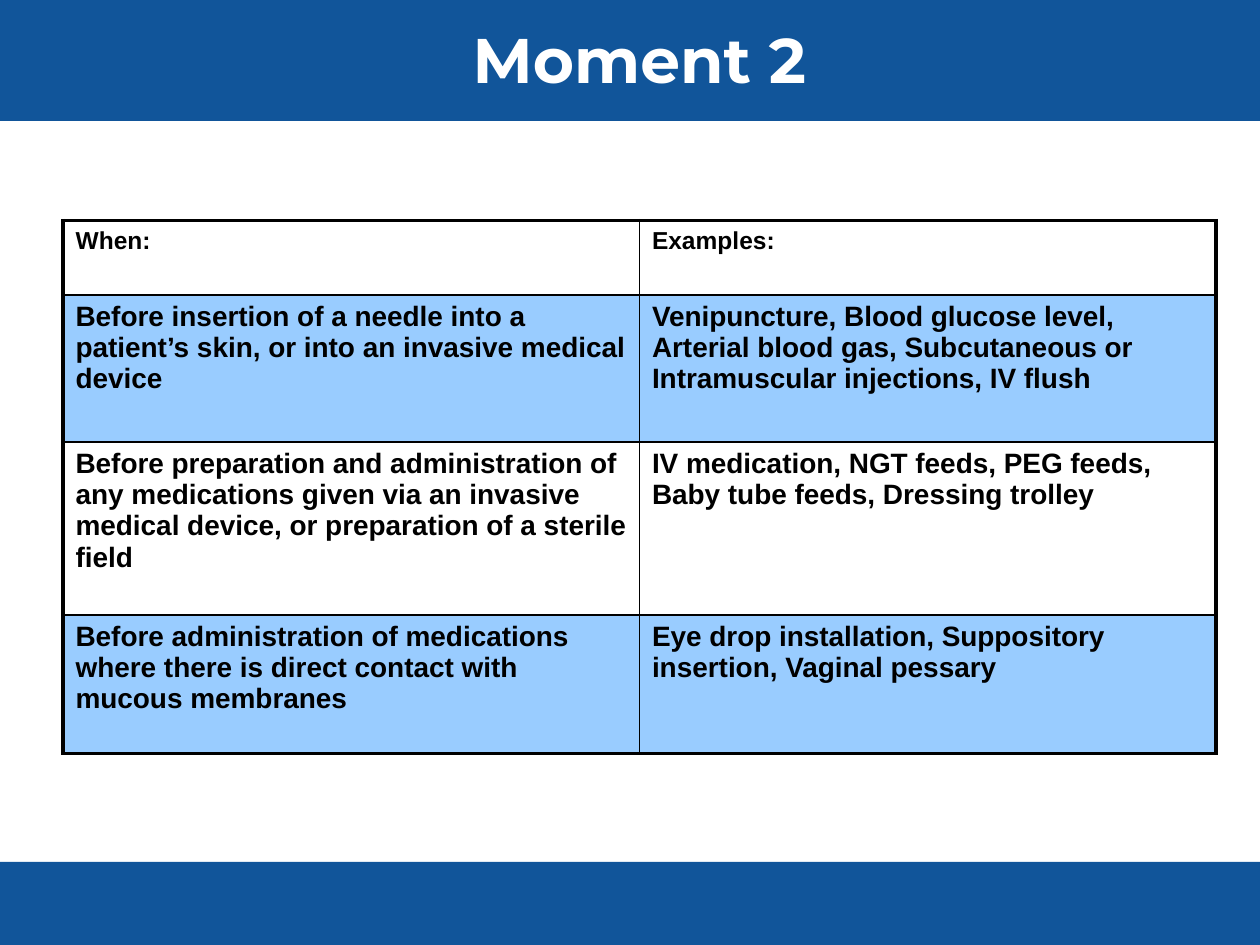
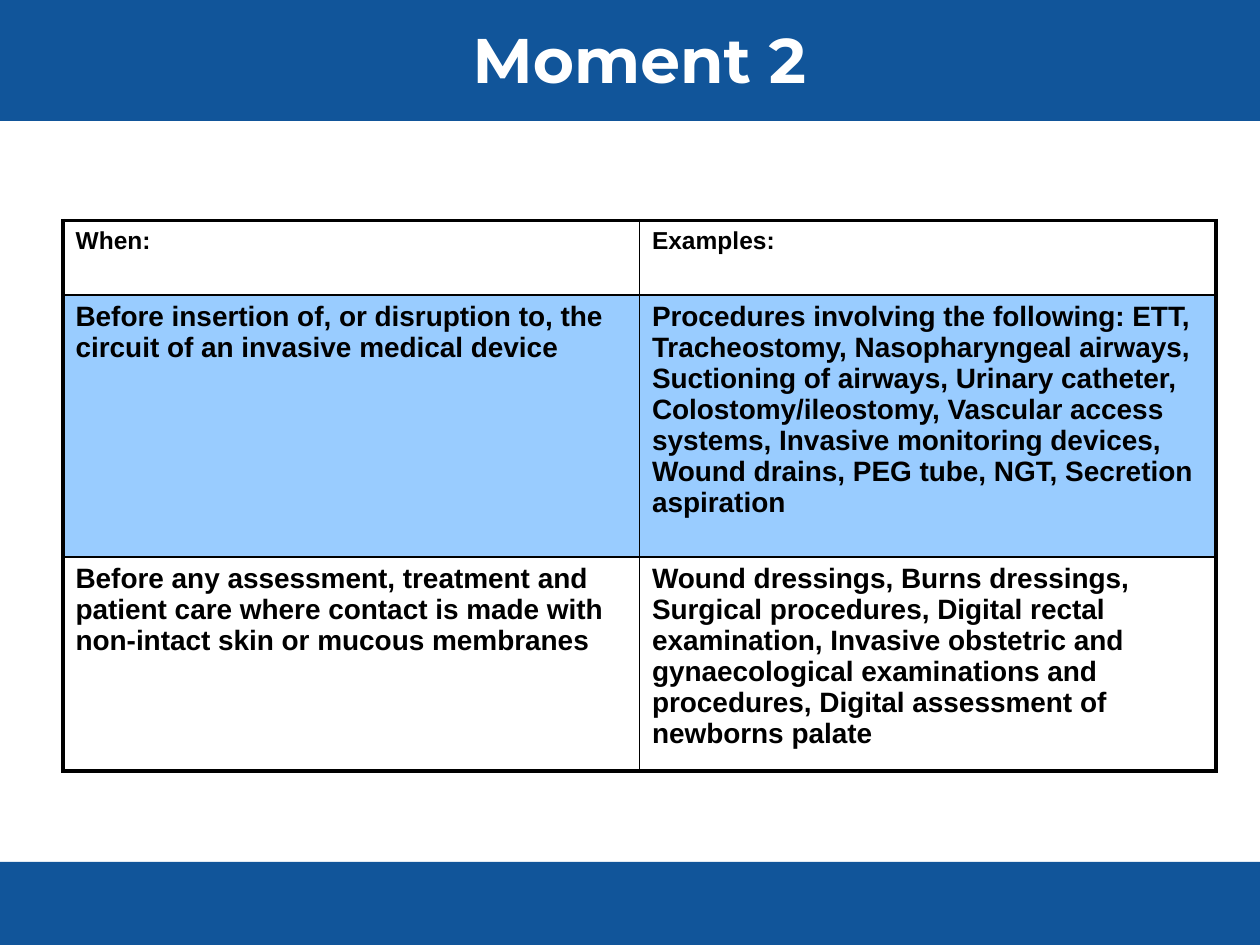
from lxml.etree import SubElement
from pptx import Presentation
from pptx.dml.color import RGBColor
from pptx.enum.shapes import MSO_SHAPE
from pptx.enum.text import MSO_ANCHOR, PP_ALIGN
from pptx.oxml.ns import qn
from pptx.util import Inches, Pt

# Content: one table per slide, each row as (height, when, examples)
TITLE = "Moment 2"
HEAD = (0.59, "When:", "Examples:")
TABLES = [
    [
        HEAD,
        (1.17, "Before insertion of a needle into a patient’s skin, or into an "
               "invasive medical device",
         "Venipuncture, Blood glucose level, Arterial blood gas, Subcutaneous or "
         "Intramuscular injections, IV flush"),
        (1.37, "Before preparation and administration of any medications given via "
               "an invasive medical device, or preparation of a sterile field",
         "IV medication, NGT feeds, PEG feeds, Baby tube feeds, Dressing trolley"),
        (1.1, "Before administration of medications where there is direct contact "
              "with mucous membranes",
         "Eye drop installation, Suppository insertion, Vaginal pessary"),
    ],
    [
        HEAD,
        (2.08, "Before insertion of, or disruption to, the circuit of an invasive "
               "medical device",
         "Procedures involving the following: ETT, Tracheostomy, Nasopharyngeal "
         "airways, Suctioning of airways, Urinary catheter, Colostomy/ileostomy, "
         "Vascular access systems, Invasive monitoring devices, Wound drains, "
         "PEG tube, NGT, Secretion aspiration"),
        (1.58, "Before any assessment, treatment and patient care where contact is "
               "made with non-intact skin or mucous membranes",
         "Wound dressings, Burns dressings, Surgical procedures, Digital rectal "
         "examination, Invasive obstetric and gynaecological examinations and "
         "procedures, Digital assessment of newborns palate"),
    ],
]

# Shared look
BLUE = RGBColor(0x11, 0x55, 0x9A)
LIGHT = RGBColor(0x99, 0xCC, 0xFF)
WHITE = RGBColor(0xFF, 0xFF, 0xFF)
BLACK = RGBColor(0, 0, 0)
WIDE, HIGH = 10, 7.5
BANDS = [(0, 0.96), (6.84, 0.66)]  # top, height
LEFT, TOP, SPAN = 0.5, 1.75, 9.15
THICK, THIN = 2.25, 1


def style(para, name, size, color):
    para.font.name = name
    para.font.size = Pt(size)
    para.font.bold = True
    para.font.color.rgb = color


def add_frame(slide):
    """Draw the two bands and the title."""
    for top, height in BANDS:
        band = slide.shapes.add_shape(MSO_SHAPE.RECTANGLE, 0, Inches(top),
                                      Inches(WIDE), Inches(height))
        band.shadow.inherit = False
        band.fill.solid()
        band.fill.fore_color.rgb = BLUE
        band.line.fill.background()
    box = slide.shapes.add_textbox(Inches(LEFT), 0, Inches(SPAN), Inches(0.92))
    frame = box.text_frame
    frame.word_wrap = True
    frame.vertical_anchor = MSO_ANCHOR.MIDDLE
    para = frame.paragraphs[0]
    para.text = TITLE
    para.alignment = PP_ALIGN.CENTER
    style(para, "Montserrat", 36, WHITE)


def set_edges(cell, outer):
    """Rule the cell; sides on the table's outline are thick."""
    props = cell._tc.get_or_add_tcPr()
    for place, side in enumerate("LRTB"):
        width = THICK if side in outer else THIN
        line = SubElement(props, qn(f"a:ln{side}"), w=str(Pt(width)))
        fill = SubElement(line, qn("a:solidFill"))
        SubElement(fill, qn("a:srgbClr"), val=str(BLACK))
        props.insert(place, line)


def add_grid(slide, rows):
    total = sum(row[0] for row in rows)
    table = slide.shapes.add_table(len(rows), 2, Inches(LEFT), Inches(TOP),
                                   Inches(SPAN), Inches(total)).table
    table.first_row = table.horz_banding = False
    for r, (height, *texts) in enumerate(rows):
        table.rows[r].height = Inches(height)
        for c, text in enumerate(texts):
            cell = table.cell(r, c)
            cell.fill.solid()
            cell.fill.fore_color.rgb = LIGHT if r % 2 else WHITE
            cell.text = text
            style(cell.text_frame.paragraphs[0], "Arial", 16 if r else 14, BLACK)
            outer = "LR"[c]
            if r == 0:
                outer += "T"
            if r == len(rows) - 1:
                outer += "B"
            set_edges(cell, outer)


def main():
    deck = Presentation()
    deck.slide_width, deck.slide_height = Inches(WIDE), Inches(HIGH)
    for rows in TABLES:
        slide = deck.slides.add_slide(deck.slide_layouts[6])
        add_frame(slide)
        add_grid(slide, rows)
    deck.save("out.pptx")


if __name__ == "__main__":
    main()
